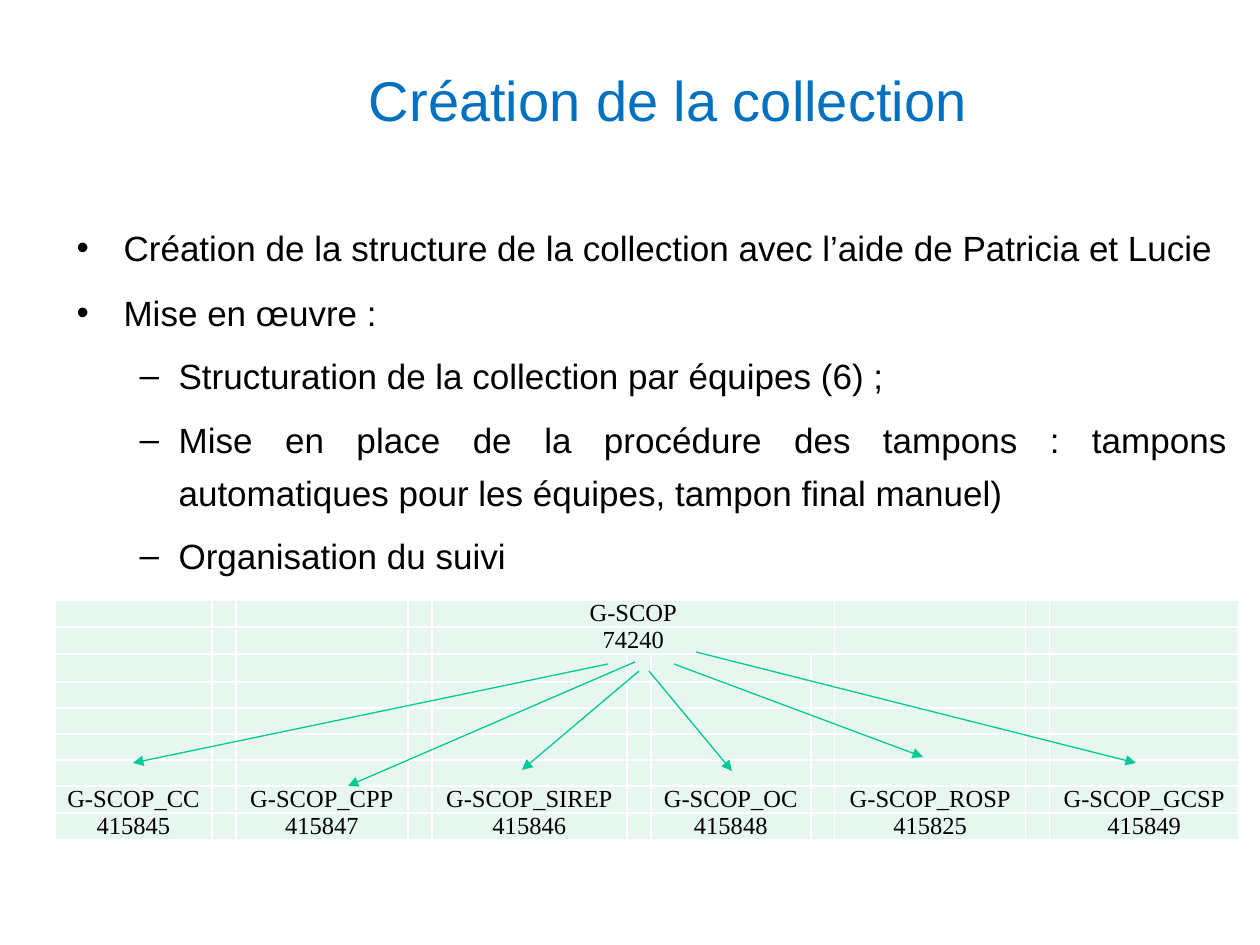
from lxml import etree
from pptx import Presentation
from pptx import util as u
from pptx.dml.color import RGBColor
from pptx.enum import shapes, text
from pptx.oxml.ns import qn

PX = 914400 // 126
COLORS = {"title": "0070C0", "text": "000000", "cell": "E7F6EF",
          "border": "FFFFFF", "arrow": "00C896"}

TITLE = "Création de la collection"
BULLETS = [
    (0, "Création de la structure de la collection avec l’aide de Patricia et Lucie"),
    (0, "Mise en œuvre :"),
    (1, "Structuration de la collection par équipes (6)\u00a0;"),
    (1, "Mise en place de la procédure des tampons : tampons automatiques "
        "pour les équipes, tampon final manuel)"),
    (1, "Organisation du suivi"),
]
BULLET_STYLES = [("•", 47, -47, 7), ("–", 102, -39, 6)]
COLLECTION = ("G-SCOP", "74240")
TEAMS = [("G-SCOP_CC", "415845"), ("G-SCOP_CPP", "415847"),
         ("G-SCOP_SIREP", "415846"), ("G-SCOP_OC", "415848"),
         ("G-SCOP_ROSP", "415825"), ("G-SCOP_GCSP", "415849")]
TEAM_WIDTHS = [157, 172, 195, 160, 191, 189]
GAP_WIDTH = 24
ROW_HEIGHTS = [27, 27, 28, 26, 26, 26, 26, 27, 27]
TABLE_LEFT, TABLE_TOP = 55, 600
ARROWS = [((696, 652), (1136, 763)), ((608, 664), (133, 763)),
          ((674, 664), (923, 757)), ((635, 662), (348, 786)),
          ((639, 671), (522, 770)), ((649, 671), (732, 771))]


def color(name):
    return RGBColor.from_string(COLORS[name])


def place(shape, left, top, width, height):
    shape.left, shape.top = left * PX, top * PX
    shape.width, shape.height = width * PX, height * PX


def set_font(paragraph, name, size, color_name):
    paragraph.font.name = name
    paragraph.font.size = u.Pt(size)
    paragraph.font.color.rgb = color(color_name)


def add_solid_fill(parent, name):
    fill = etree.SubElement(parent, qn("a:solidFill"))
    etree.SubElement(fill, qn("a:srgbClr"), val=COLORS[name])


def add_title(slide):
    title = slide.shapes.title
    place(title, 325, 35, 905, 129)
    frame = title.text_frame
    frame.auto_size = text.MSO_AUTO_SIZE.NONE
    frame.vertical_anchor = text.MSO_ANCHOR.MIDDLE
    frame.margin_left = 44 * PX
    frame.text = TITLE
    paragraph = frame.paragraphs[0]
    paragraph.alignment = text.PP_ALIGN.LEFT
    set_font(paragraph, "Arial", 32, "title")


def add_bullets(slide):
    body = slide.placeholders[1]
    place(body, 64, 209, 1176, 591)
    frame = body.text_frame
    frame.auto_size = text.MSO_AUTO_SIZE.NONE
    for index, (level, wording) in enumerate(BULLETS):
        paragraph = frame.add_paragraph() if index else frame.paragraphs[0]
        mark, margin, indent, space = BULLET_STYLES[level]
        paragraph.text = wording
        paragraph.level = level
        properties = paragraph._p.get_or_add_pPr()
        properties.set("marL", str(margin * PX))
        properties.set("indent", str(indent * PX))
        bullet_color = etree.SubElement(properties, qn("a:buClr"))
        etree.SubElement(bullet_color, qn("a:srgbClr"), val=COLORS["text"])
        etree.SubElement(properties, qn("a:buFont"), typeface="Arial")
        etree.SubElement(properties, qn("a:buChar"), char=mark)
        paragraph.alignment = text.PP_ALIGN.JUSTIFY
        paragraph.line_spacing = 1.26
        paragraph.space_before = u.Pt(space if index else 0)
        set_font(paragraph, "Arial", 20, "text")


def style_cell(cell):
    cell.margin_left = cell.margin_right = cell.margin_top = cell.margin_bottom = 0
    properties = cell._tc.get_or_add_tcPr()
    for side in ("lnL", "lnR", "lnT", "lnB"):
        line = etree.SubElement(properties, qn(f"a:{side}"), w=str(u.Pt(1)))
        add_solid_fill(line, "border")
    cell.fill.solid()
    cell.fill.fore_color.rgb = color("cell")
    paragraph = cell.text_frame.paragraphs[0]
    etree.SubElement(paragraph._p, qn("a:endParaRPr"), sz="800")


def write_cell(cell, wording, anchor, line_spacing):
    cell.vertical_anchor = anchor
    paragraph = cell.text_frame.paragraphs[0]
    paragraph.add_run().text = wording
    paragraph.alignment = text.PP_ALIGN.CENTER
    paragraph.line_spacing = line_spacing
    set_font(paragraph, "Times New Roman", 14, "text")


def add_team_table(slide):
    widths = [GAP_WIDTH] * (2 * len(TEAMS) - 1)
    widths[::2] = TEAM_WIDTHS
    frame = slide.shapes.add_table(
        len(ROW_HEIGHTS), len(widths), TABLE_LEFT * PX, TABLE_TOP * PX,
        sum(widths) * PX, sum(ROW_HEIGHTS) * PX)
    table = frame.table
    table.first_row = table.horz_banding = False
    for column, width in zip(table.columns, widths):
        column.width = width * PX
    for row, height in zip(table.rows, ROW_HEIGHTS):
        row.height = height * PX
    for cell in table.iter_cells():
        style_cell(cell)
    for row, wording in enumerate(COLLECTION):
        table.cell(row, 4).merge(table.cell(row, 7))
        write_cell(table.cell(row, 4), wording, text.MSO_ANCHOR.BOTTOM, 0.93)
    first_team_row = len(ROW_HEIGHTS) - 2
    for team, labels in enumerate(TEAMS):
        for row, wording in enumerate(labels, first_team_row):
            write_cell(table.cell(row, 2 * team), wording, text.MSO_ANCHOR.MIDDLE, 0.97)


def add_arrow(slide, start, end):
    points = [value * PX for value in start + end]
    arrow = slide.shapes.add_connector(shapes.MSO_CONNECTOR.STRAIGHT, *points)
    arrow.line.color.rgb = color("arrow")
    arrow.line.width = u.Pt(0.75)
    etree.SubElement(arrow.line._get_or_add_ln(), qn("a:tailEnd"), type="triangle")
    etree.SubElement(arrow._element.spPr, qn("a:effectLst"))


def main():
    presentation = Presentation()
    presentation.slide_width, presentation.slide_height = u.Inches(10), u.Inches(7.5)
    slide = presentation.slides.add_slide(presentation.slide_layouts[1])
    add_title(slide)
    add_bullets(slide)
    add_team_table(slide)
    for start, end in ARROWS:
        add_arrow(slide, start, end)
    presentation.save("out.pptx")


if __name__ == "__main__":
    main()
